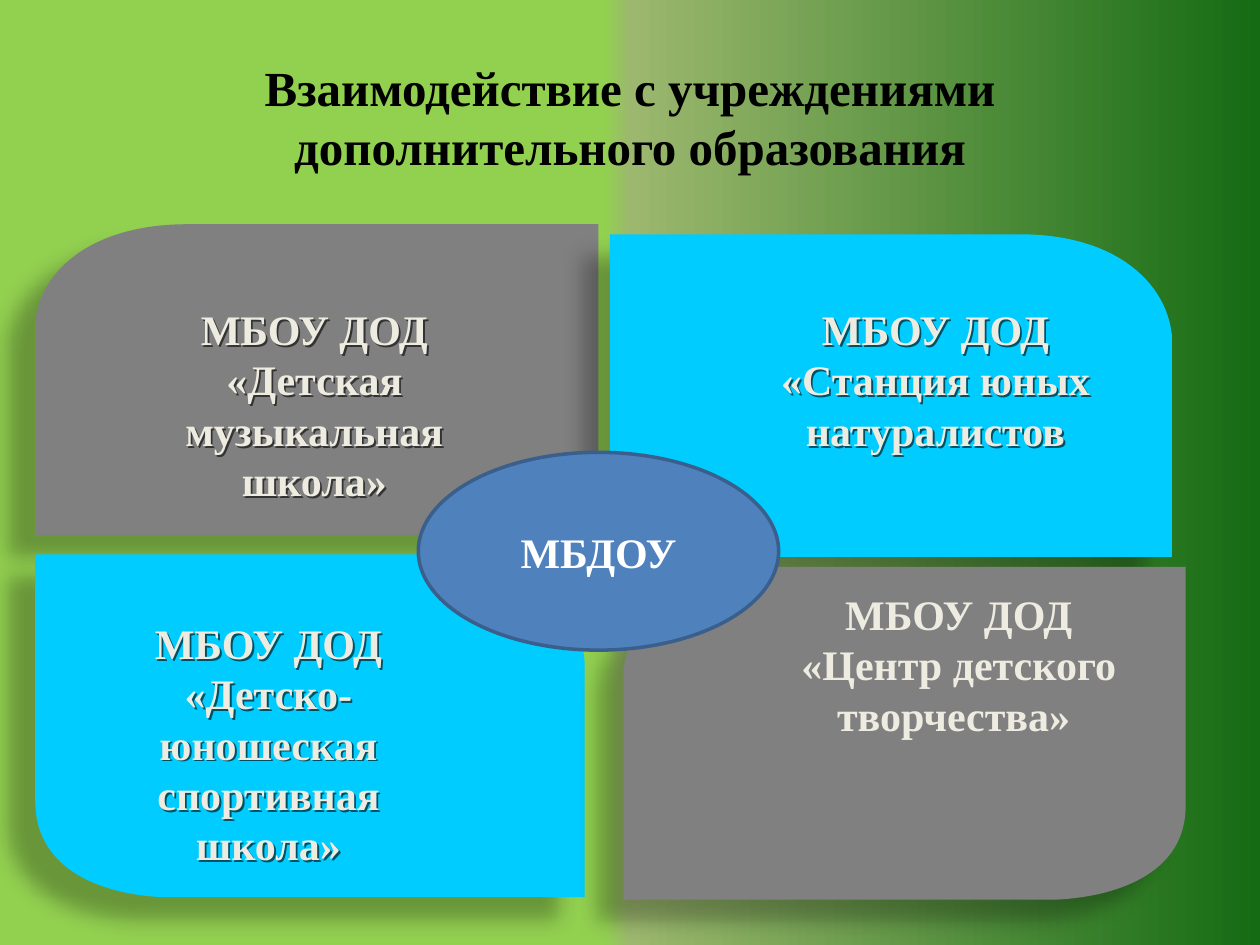
import copy
import pptx
import pptx.dml.color
import pptx.enum.shapes
import pptx.enum.text
import pptx.oxml
import pptx.oxml.ns
import pptx.util

Inches, Pt = pptx.util.Inches, pptx.util.Pt
RGB = pptx.dml.color.RGBColor
qn = pptx.oxml.ns.qn
BLACK = RGB(0, 0, 0)
WHITE = RGB(255, 255, 255)
CREAM = RGB(0xEE, 0xEC, 0xE1)
GRAY = RGB(0x80, 0x80, 0x80)
CYAN = RGB(0, 0xCC, 0xFF)
BLUE = RGB(0x4F, 0x81, 0xBD)
NAVY = RGB(0x3A, 0x5F, 0x8C)

STOPS = [(0.48, RGB(0x92, 0xD0, 0x50)), (0.5, RGB(0x9C, 0xB8, 0x6E)),
         (1, RGB(0x15, 0x6B, 0x13))]
TITLE = "Взаимодействие с учреждениями дополнительного образования"
HUB = "МБДОУ"

# Petals: left, top, width, height, mirrored, colour
PETALS = [
    (0.28, 1.78, 4.47, 2.47, False, GRAY),
    (4.84, 1.86, 4.46, 2.56, True, CYAN),
    (0.28, 4.4, 4.36, 2.72, True, CYAN),
    (4.95, 4.5, 4.46, 2.64, False, GRAY),
]
# Labels: left, top, width, height, text shadow, text
LABELS = [
    (0.96, 2.36, 3.07, 1.72, True, "МБОУ ДОД «Детская музыкальная школа»"),
    (6.18, 4.62, 2.86, 1.31, False, "МБОУ ДОД «Центр детского творчества» "),
    (0.59, 4.85, 3.08, 2.12, True,
     "МБОУ ДОД «Детско-юношеская спортивная школа»"),
    (5.86, 2.36, 3.13, 1.31, True, "МБОУ ДОД «Станция юных натуралистов"),
]

# Petal outline in a unit square: corner points, and the handles
# of the curves that replace the line of that number
EDGE = [(0.77, 1), (0, 1), (0, 0.31), (0.27, 0), (1, 0), (1, 0.72), (0.77, 1)]
BENDS = {2: [(0.01, 0.15), (0.1, 0)], 5: [(1, 0.91), (0.89, 0.99)]}


def shade(blur, dist, angle, alpha):
    """Outer shadow in points, degrees and percent."""
    return pptx.oxml.parse_xml(
        '<a:effectLst xmlns:a="http://schemas.openxmlformats.org/drawingml/2006/main">'
        f'<a:outerShdw blurRad="{Pt(blur)}" dist="{Pt(dist)}" '
        f'dir="{angle * 60000}" algn="tl" rotWithShape="0">'
        f'<a:srgbClr val="000000"><a:alpha val="{alpha * 1000}"/></a:srgbClr>'
        '</a:outerShdw></a:effectLst>')


def bend(line, hands):
    """Turn a straight segment into a cubic curve."""
    cubic = pptx.oxml.parse_xml(
        '<a:cubicBezTo xmlns:a="http://schemas.openxmlformats.org/drawingml/2006/main">'
        + "".join(f'<a:pt x="{x}" y="{y}"/>' for x, y in hands)
        + '</a:cubicBezTo>')
    cubic.append(line[0])
    line.getparent().replace(line, cubic)


def draw(shapes, x, y, w, h, flip, color):
    x, y, w, h = map(Inches, (x, y, w, h))

    def place(a, b):
        return round(w * (1 - a if flip else a)), round(h * b)

    pts = [(x + a, y + b) for a, b in (place(*p) for p in EDGE)]
    form = shapes.build_freeform(*pts[0])
    form.add_line_segments(pts[1:], close=True)
    petal = form.convert_to_shape()
    lines = petal._element.findall(".//" + qn("a:lnTo"))
    for num, hands in BENDS.items():
        bend(lines[num - (0 if num == 5 else 0)], [place(*p) for p in hands])
    petal.fill.solid()
    petal.fill.fore_color.rgb = color
    petal.line.fill.background()
    petal._element.spPr.append(shade(11.8, 19.7, 141, 28))


def write(shape, text, size, color, anchor):
    frame = shape.text_frame
    for key, val in {"word_wrap": True, "vertical_anchor": anchor}.items():
        setattr(frame, key, val)
    para = frame.paragraphs[0]
    para.alignment = pptx.enum.text.PP_ALIGN.CENTER
    run = para.add_run()
    run.text = text
    run.font.color.rgb = color
    look = {"name": "Times New Roman", "size": Pt(size), "bold": True}
    for key, val in look.items():
        setattr(run.font, key, val)


def main():
    deck = pptx.Presentation()
    deck.slide_width, deck.slide_height = Inches(10), Inches(7.5)
    slide = deck.slides.add_slide(deck.slide_layouts[6])
    shapes = slide.shapes
    top = pptx.enum.text.MSO_ANCHOR.TOP
    mid = pptx.enum.text.MSO_ANCHOR.MIDDLE

    # Background gradient
    fill = slide.background.fill
    fill.gradient()
    fill.gradient_angle = 0
    grad = slide._element.find(".//" + qn("a:gsLst"))
    while len(grad) < len(STOPS):
        grad.append(copy.deepcopy(grad[0]))
    for stop, (pos, color) in zip(fill.gradient_stops, STOPS):
        stop.position = pos
        stop.color.rgb = color

    # Petals
    for petal in PETALS:
        draw(shapes, *petal)

    # Labels
    for *box, shadow, text in LABELS:
        label = shapes.add_textbox(*map(Inches, box))
        write(label, text, 24, CREAM, top)
        if shadow:
            label._element.spPr.append(shade(0, 1.5, 45, 60))

    # Hub
    hub = shapes.add_shape(pptx.enum.shapes.MSO_SHAPE.OVAL,
                           *map(Inches, (3.32, 3.59, 2.86, 1.57)))
    hub.shadow.inherit = False
    hub.fill.solid()
    hub.fill.fore_color.rgb = BLUE
    hub.line.color.rgb = NAVY
    hub.line.width = Pt(2)
    write(hub, HUB, 24, WHITE, mid)

    # Title
    title = shapes.add_textbox(*map(Inches, (0.5, 0.3, 9, 1.25)))
    write(title, TITLE, 28, BLACK, mid)

    deck.save("out.pptx")


if __name__ == "__main__":
    main()
